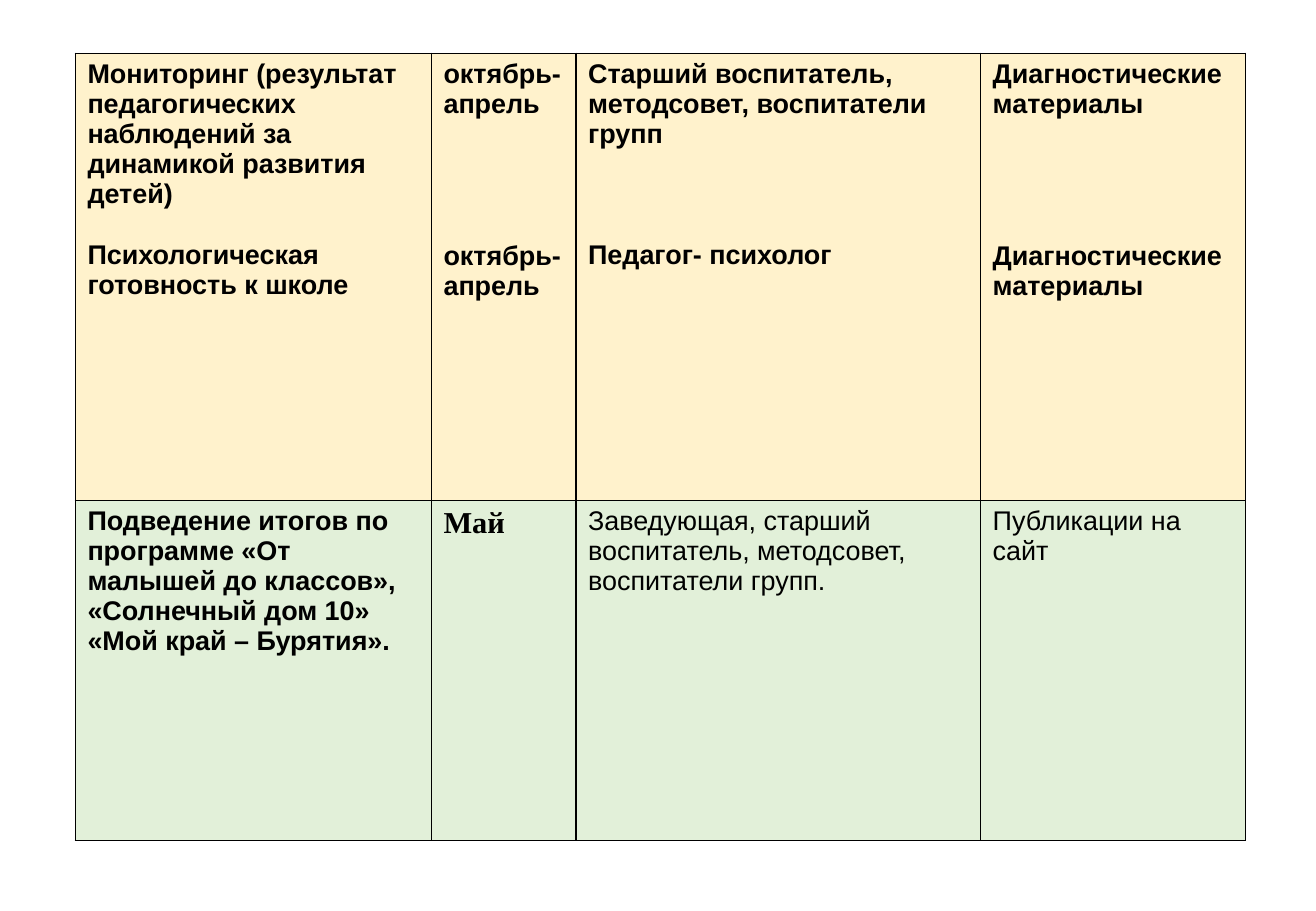
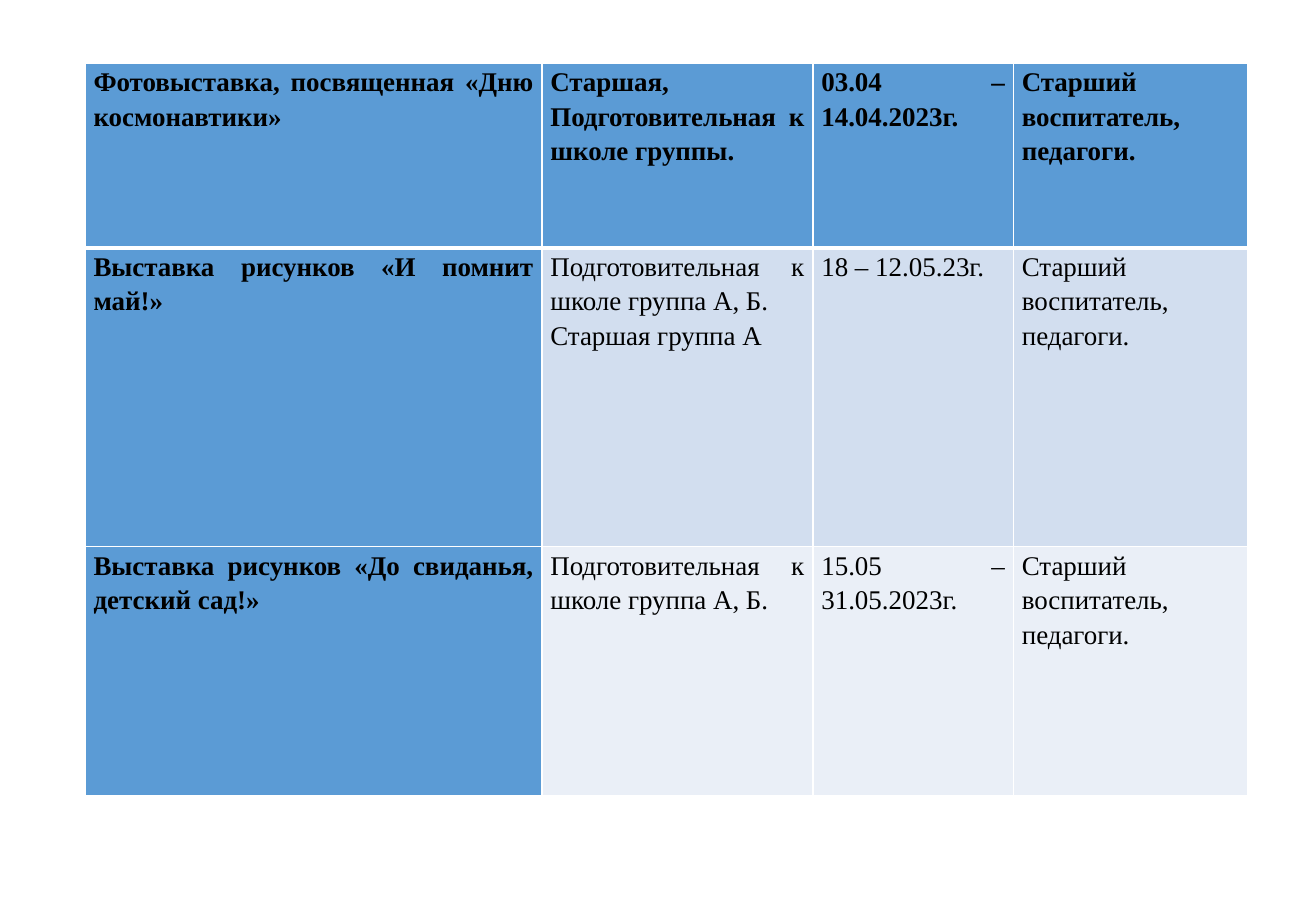
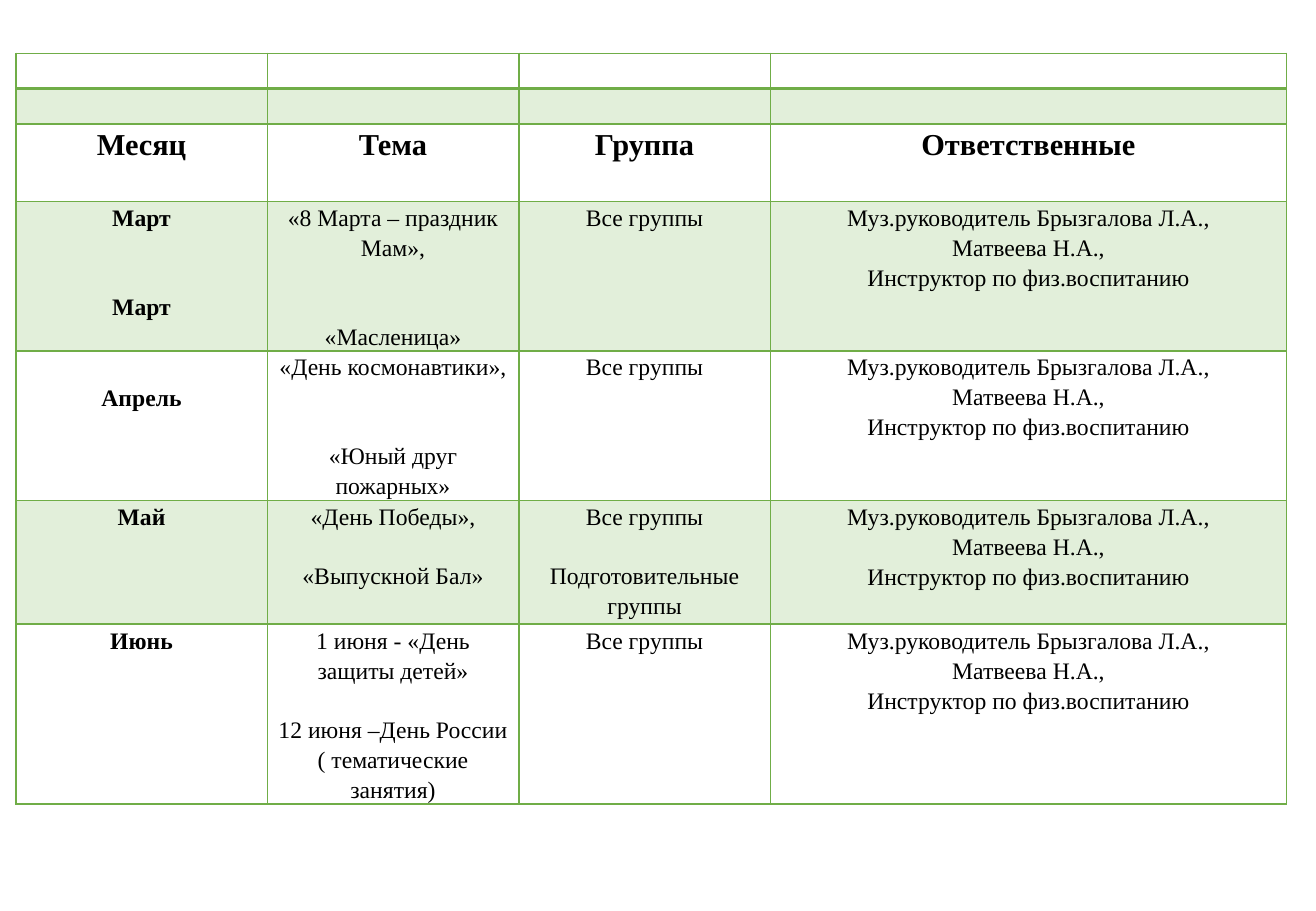
from lxml.etree import SubElement
from pptx import Presentation
from pptx.dml.color import RGBColor
from pptx.enum.text import PP_ALIGN as Align
from pptx.oxml.ns import qn
from pptx.util import Inches, Pt

BLACK, WHITE = "000000", "FFFFFF"
CREAM, MINT = "FFF2CC", "E2F0D9"
BLUE, BLUE_DARK_BAND, BLUE_LIGHT_BAND = "5B9BD5", "D2DEEF", "EAEFF7"
GREEN, GREEN_BAND = "70AD47", "E2EFDA"
SANS, SERIF = "Arial", "Times New Roman"


def color(value):
    return RGBColor.from_string(value)


def add_border(cell, side, value, width):
    """Draw one side of a cell: L, R, T or B."""
    line = SubElement(cell._tc.get_or_add_tcPr(), qn(f"a:ln{side}"), w=str(Pt(width)))
    fill = SubElement(line, qn("a:solidFill"))
    SubElement(fill, qn("a:srgbClr"), val=value)


def fill_cell(cell, paragraphs, look):
    """Write paragraphs, each a string or a (space before, string) pair."""
    frame = cell.text_frame
    frame.word_wrap = True
    for side, margin in zip(("left", "top", "right", "bottom"), look["margins"]):
        setattr(cell, f"margin_{side}", Inches(margin))
    if isinstance(paragraphs, str):
        paragraphs = [paragraphs]
    for index, item in enumerate(paragraphs):
        space, text = item if isinstance(item, tuple) else (0, item)
        para = frame.add_paragraph() if index else frame.paragraphs[0]
        para.text = text
        layout = {"alignment": look["align"], "line_spacing": look["spacing"],
                  "space_before": Pt(space)}
        for name, value in layout.items():
            setattr(para, name, value)
        for span in para.runs:
            font = {"name": look["font"], "size": Pt(look["size"]), "bold": look["bold"]}
            for name, value in font.items():
                setattr(span.font, name, value)
            span.font.color.rgb = color(BLACK)
        if not text:
            SubElement(para._p, qn("a:endParaRPr"), sz="1200")


def add_grid(deck, origin, columns, heights, rows, style, border, thick=None):
    """Add a page with one table; thick is the width of the line under row one."""
    page = deck.slides.add_slide(deck.slide_layouts[6])
    left, top = origin
    box = page.shapes.add_table(
        len(rows), len(columns), Inches(left), Inches(top),
        Inches(sum(columns)), Inches(sum(heights)))
    table = box.table
    table.first_row = table.horz_banding = False
    for column, width in zip(table.columns, columns):
        column.width = Inches(width)
    for row, height in zip(table.rows, heights):
        row.height = Inches(height)
    for r, row in enumerate(rows):
        for c, paragraphs in enumerate(row):
            cell = table.cell(r, c)
            look = style(r, c)
            fill_cell(cell, paragraphs, look)
            for side in "LRTB":
                heavy = thick and (r, side) in ((0, "B"), (1, "T"))
                add_border(cell, side, border, thick if heavy else 1)
            if look["fill"]:
                cell.fill.solid()
                cell.fill.fore_color.rgb = color(look["fill"])
            else:
                cell.fill.background()


def add_monitoring(deck):
    def style(r, c):
        is_month = (r, c) == (1, 1)
        return {"font": SERIF if is_month else SANS, "size": 18 if is_month else 16,
                "bold": r == 0 or c < 2, "align": Align.LEFT, "spacing": 1.0,
                "margins": (0.1, 0.05, 0.1, 0.05), "fill": (CREAM, MINT)[r]}

    line = 18
    rows = [
        [["Мониторинг (результат педагогических наблюдений за динамикой развития детей)",
          (line, "Психологическая готовность к школе")],
         ["октябрь- апрель", (4 * line, "октябрь-апрель")],
         ["Старший воспитатель, методсовет, воспитатели групп",
          (3 * line, "Педагог- психолог")],
         ["Диагностические материалы", (4 * line, "Диагностические материалы")]],
        [["Подведение итогов по программе «От малышей до классов», «Солнечный дом 10»",
          "«Мой край – Бурятия»."],
         "Май",
         "Заведующая, старший воспитатель, методсовет, воспитатели групп.",
         "Публикации на сайт"],
    ]
    add_grid(deck, (0.62, 0.44), (2.93, 1.19, 3.33, 2.18), (3.68, 2.8),
             rows, style, BLACK)


def add_exhibitions(deck):
    def style(r, c):
        band = (BLUE, BLUE_DARK_BAND, BLUE_LIGHT_BAND)[r]
        return {"font": SERIF, "size": 16, "bold": r == 0 or c == 0,
                "align": Align.LEFT if c == 3 else Align.JUSTIFY, "spacing": 1.15,
                "margins": (0.07, 0, 0.07, 0), "fill": BLUE if c == 0 else band}

    staff = "Старший воспитатель, педагоги."
    rows = [
        ["Фотовыставка, посвященная «Дню космонавтики»",
         "Старшая, Подготовительная к школе группы.", "03.04 – 14.04.2023г.", staff],
        ["Выставка рисунков «И помнит май!»",
         ["Подготовительная к школе группа А, Б.", "Старшая группа А"],
         "18 – 12.05.23г.", staff],
        ["Выставка рисунков «До свиданья, детский сад!»",
         "Подготовительная к школе группа А, Б.", "15.05 – 31.05.2023г.", staff],
    ]
    add_grid(deck, (0.7, 0.52), (3.76, 2.23, 1.65, 1.93), (1.52, 2.46, 2.05),
             rows, style, WHITE, thick=3)


def add_celebrations(deck):
    def style(r, c):
        # April starts one line lower than its neighbours
        top = 0.25 if (r, c) == (4, 0) else 0
        return {"font": SERIF, "size": 18 if r == 2 else 14, "bold": r == 2 or c == 0,
                "align": Align.CENTER, "spacing": 1.15, "margins": (0.07, top, 0.07, 0),
                "fill": GREEN_BAND if r % 2 else None}

    line = 17.5
    everyone = "Все группы"
    staff = ["Муз.руководитель Брызгалова Л.А.,", "Матвеева Н.А.,",
             "Инструктор по физ.воспитанию"]
    rows = [
        [""] * 4,
        [""] * 4,
        ["Месяц", "Тема", "Группа", "Ответственные"],
        [["Март", (2 * line, "Март")],
         ["«8 Марта – праздник Мам»,", (2 * line, "«Масленица»")], everyone, staff],
        ["Апрель",
         ["«День космонавтики»,", (2 * line, "«Юный друг пожарных»")], everyone, staff],
        ["Май",
         ["«День Победы»,", (line, "«Выпускной Бал»")],
         [everyone, (line, "Подготовительные группы")], staff],
        ["Июнь",
         ["1 июня - «День\nзащиты детей»",
          (line, "12 июня –День России ( тематические занятия)")], everyone, staff],
    ]
    add_grid(deck, (0.13, 0.44), (2.07, 2.07, 2.07, 4.25),
             (0.29, 0.29, 0.64, 1.23, 1.23, 1.02, 1.48), rows, style, GREEN, thick=2)


def main():
    deck = Presentation()
    deck.slide_width, deck.slide_height = Inches(10.83), Inches(7.5)
    add_monitoring(deck)
    add_exhibitions(deck)
    add_celebrations(deck)
    deck.save("out.pptx")


if __name__ == "__main__":
    main()
